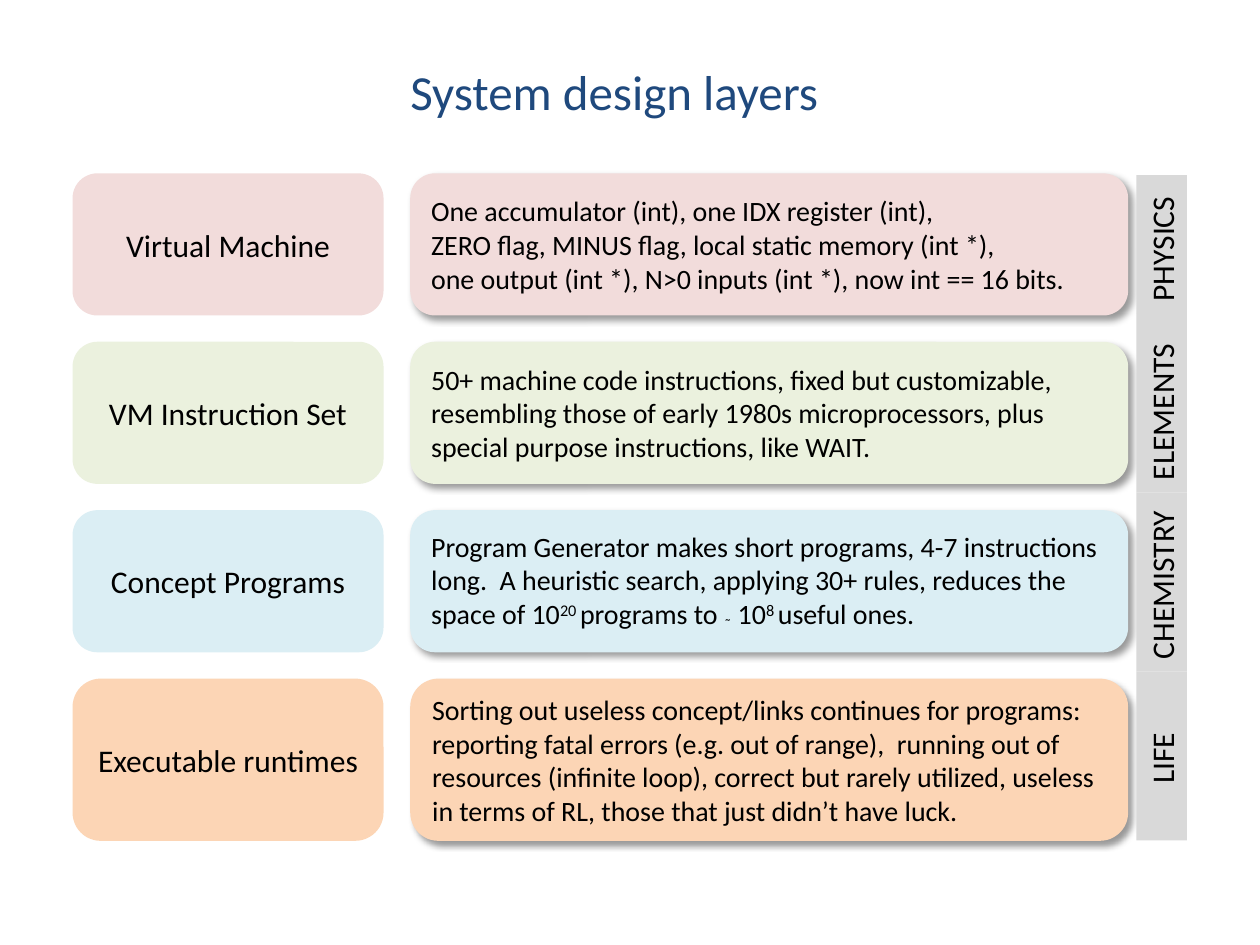
from lxml.etree import SubElement as Sub
from pptx import Presentation
from pptx.dml.color import RGBColor
from pptx.enum.shapes import MSO_SHAPE as Shape
from pptx.enum.text import MSO_ANCHOR as Anchor, MSO_AUTO_SIZE as Fit, PP_ALIGN as Align
from pptx.oxml.ns import qn
from pptx.util import Inches, Pt

LAYERS = [
    ("Virtual Machine", "F2DCDB", 1.1,
     [("One accumulator (int), one IDX register (int),\n"
       "ZERO flag, MINUS flag, local static memory (int *), \n"
       "one output (int *), N>0 inputs (int *), now int == 16 bits.", 0)]),
    ("VM Instruction Set", "EBF1DE", 1.1,
     [("50+ machine code instructions, fixed but customizable, "
       "resembling those of early 1980s microprocessors, plus\n"
       "special purpose instructions, like WAIT.", 0)]),
    ("Concept Programs", "DBEEF4", 1.1,
     [("Program Generator makes short programs, 4-7 instructions long.  "
       "A heuristic search, applying 30+ rules, reduces the space of 10", 0),
      ("20 ", 30), ("programs to ", 0), ("˜", -20), (" 10", 0),
      ("8 ", 30), ("useful ones.", 0)]),
    ("Executable runtimes", "FCD5B5", 1.26,
     [("Sorting out useless concept/links continues for programs: "
       "reporting fatal errors (e.g. out of range),  running out of "
       "resources (infinite loop), correct but rarely utilized, useless "
       "in terms of RL, those that just didn’t have luck.", 0)]),
]
STRIPS = [("PHYSICS", 1.1, 0.1), ("ELEMENTS", 1.42, 0.1),
          ("CHEMISTRY", 1.42, 0.1), ("LIFE", 1.34, 0.45)]
TOP, PITCH = 1.39, 4.01 / 3


def color(code):
    """Turn a hex string into a colour."""
    return RGBColor.from_string(code)


def style(para, size, code="000000", align=Align.LEFT):
    """Format a paragraph and all of its runs."""
    para.alignment = align
    for run in para.runs:
        run.font.name = "Calibri"
        run.font.size = Pt(size)
        run.font.color.rgb = color(code)


def block(slide, kind, box, fill):
    """Add a filled shape without shadow or line."""
    shape = slide.shapes.add_shape(kind, *map(Inches, box))
    shape.shadow.inherit = False
    shape.fill.solid()
    shape.fill.fore_color.rgb = color(fill)
    shape.line.fill.background()
    return shape


def card(slide, box, fill, parts, size, align):
    """Add a rounded card whose text parts carry baseline shifts."""
    shape = block(slide, Shape.ROUNDED_RECTANGLE, box, fill)
    shape.line.color.rgb = color(fill)
    shape.line.width = Pt(2)
    frame = shape.text_frame
    frame.word_wrap = True
    frame.vertical_anchor = Anchor.MIDDLE
    para = frame.paragraphs[0]
    para.text = parts[0][0]
    for text, base in parts[1:]:
        run = para.add_run()
        run.text = text
        if base:
            run.font._element.set("baseline", str(base * 1000))
    style(para, size, align=align)
    return shape


def shade(shape):
    """Give a shape a soft shadow to the lower right."""
    glow = Sub(shape._element.spPr.find(qn("a:effectLst")), qn("a:outerShdw"),
               blurRad=str(Pt(4)), dist=str(Pt(3)), dir=str(45 * 60000),
               algn="tl", rotWithShape="0")
    tint = Sub(glow, qn("a:srgbClr"), val="000000")
    Sub(tint, qn("a:alpha"), val="40000")


def strip(slide, text, top, size, inset):
    """Add a grey band that reads from bottom to top."""
    box = (9.22 - size / 2, top + size / 2 - 0.2, size, 0.4)
    shape = block(slide, Shape.RECTANGLE, box, "D9D9D9")
    shape.rotation = 270
    frame = shape.text_frame
    frame.word_wrap = True
    frame.vertical_anchor = Anchor.TOP
    frame.margin_left = Inches(inset)
    frame.text = text
    style(frame.paragraphs[0], 18)


def title(slide, text):
    """Add the slide heading."""
    box = slide.shapes.add_textbox(*map(Inches, (3.14, 0.44, 3.47, 0.57)))
    frame = box.text_frame
    frame.word_wrap = False
    frame.auto_size = Fit.SHAPE_TO_FIT_TEXT
    frame.text = text
    style(frame.paragraphs[0], 28, "1F497D", Align.CENTER)


def main():
    """Build the slide and save it."""
    deck = Presentation()
    deck.slide_width, deck.slide_height = Inches(10), Inches(7.5)
    slide = deck.slides.add_slide(deck.slide_layouts[6])
    title(slide, "System design layers")
    for row, (name, fill, tall, parts) in enumerate(LAYERS):
        top = TOP + row * PITCH
        card(slide, (0.59, top, 2.44, tall), fill, [(name, 0)], 18, Align.CENTER)
        shade(card(slide, (3.27, top, 5.67, tall), fill, parts, 16, Align.LEFT))
    top = TOP
    for text, size, inset in STRIPS:
        strip(slide, text, top, size, inset)
        top += size
    deck.save("out.pptx")


if __name__ == "__main__":
    main()
